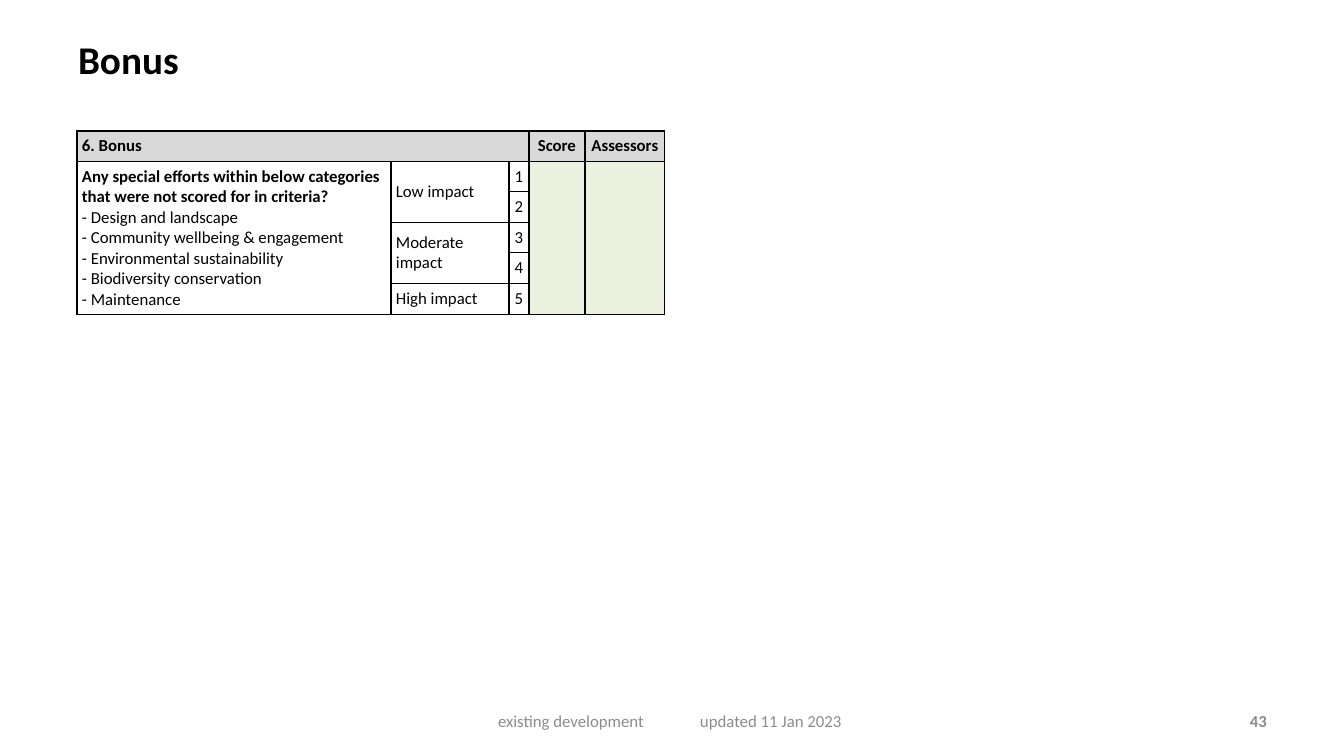
import pptx
import pptx.util
import pptx.dml.color
import pptx.enum.text
from lxml import etree
from pptx.oxml.ns import qn

COLORS = {"ink": "000000", "muted": "8C8C8C", "header": "D9D9D9", "score": "EBF1DE"}
ALIGN = pptx.enum.text.PP_ALIGN
ANCHOR = pptx.enum.text.MSO_ANCHOR
TITLE_ONLY = 5


def px(length):
    return pptx.util.Emu(round(length * 914400 / 100.8))


class SlideBuilder:
    font = "Calibri"
    body_size = 12
    cell_margin = 5

    def __init__(self, presentation):
        self.slide = presentation.slides.add_slide(presentation.slide_layouts[TITLE_ONLY])

    def add_run(self, paragraph, text, color="ink", size=body_size, bold=False):
        run = paragraph.add_run()
        run.text = text
        run.font.name = self.font
        run.font.size = pptx.util.Pt(size)
        run.font.bold = bold
        run.font.color.rgb = pptx.dml.color.RGBColor.from_string(COLORS[color])

    def title(self, text, left, top, width, height):
        title = self.slide.shapes.title
        title.left, title.top, title.width, title.height = map(px, (left, top, width, height))
        frame = title.text_frame
        frame.auto_size = pptx.enum.text.MSO_AUTO_SIZE.NONE
        frame.vertical_anchor = ANCHOR.TOP
        frame.paragraphs[0].alignment = ALIGN.LEFT
        self.add_run(frame.paragraphs[0], text, size=28, bold=True)

    def footer(self, text, left, top, width, height, align=ALIGN.LEFT, bold=False, tab=None):
        """Add a grey line of text; tab is the distance of its tab stop from the text's left."""
        box = self.slide.shapes.add_textbox(*map(px, (left, top, width, height)))
        frame = box.text_frame
        frame.word_wrap = True
        frame.vertical_anchor = ANCHOR.MIDDLE
        frame.margin_left = frame.margin_right = px(10)
        paragraph = frame.paragraphs[0]
        paragraph.alignment = align
        if tab:
            stops = etree.SubElement(paragraph._p.get_or_add_pPr(), qn("a:tabLst"))
            etree.SubElement(stops, qn("a:tab"), pos=str(px(tab)), algn="l")
        self.add_run(paragraph, text, color="muted", bold=bold)

    def table(self, left, top, widths, row_height, row_count):
        frame = self.slide.shapes.add_table(
            row_count, len(widths), px(left), px(top), px(sum(widths)), px(row_height * row_count))
        table = frame.table
        table.first_row = table.horz_banding = False
        for column, width in zip(table.columns, widths):
            column.width = px(width)
        for row in table.rows:
            row.height = px(row_height)
            for cell in row.cells:
                self.format_cell(cell)
        return table

    def format_cell(self, cell):
        cell.margin_left = cell.margin_right = px(self.cell_margin)
        cell.margin_top = cell.margin_bottom = px(self.cell_margin)
        cell.vertical_anchor = ANCHOR.MIDDLE
        properties = cell._tc.get_or_add_tcPr()
        for side in ("lnL", "lnR", "lnT", "lnB"):
            line = etree.SubElement(properties, qn(f"a:{side}"), w=str(pptx.util.Pt(1)))
            fill = etree.SubElement(line, qn("a:solidFill"))
            etree.SubElement(fill, qn("a:srgbClr"), val=COLORS["ink"])
        cell.fill.background()
        # An empty cell keeps the body size, so it does not stretch its row.
        etree.SubElement(cell.text_frame.paragraphs[0]._p, qn("a:endParaRPr"),
                         sz=str(self.body_size * 100))

    def cell(self, table, row, column, lines=(), span=(1, 1), fill=None,
             align=ALIGN.LEFT, bold_lines=0):
        """Fill a cell, merging it over span (rows, columns); the first bold_lines are bold."""
        cell = table.cell(row, column)
        if span != (1, 1):
            cell.merge(table.cell(row + span[0] - 1, column + span[1] - 1))
        if fill:
            cell.fill.solid()
            cell.fill.fore_color.rgb = pptx.dml.color.RGBColor.from_string(COLORS[fill])
        paragraph = cell.text_frame.paragraphs[0]
        paragraph.alignment = align
        for index, line in enumerate(lines):
            if index:
                paragraph.add_line_break()
            self.add_run(paragraph, line, bold=index < bold_lines)


def main():
    presentation = pptx.Presentation()
    presentation.slide_width, presentation.slide_height = px(1344), px(756)
    builder = SlideBuilder(presentation)

    builder.title("Bonus", 68, 30, 1044, 100)

    criteria = builder.table(77, 131, [314, 118, 20, 56, 80], row_height=30, row_count=6)
    builder.cell(criteria, 0, 0, ["6. Bonus"], span=(1, 3), fill="header", bold_lines=1)
    for column, heading in enumerate(["Score", "Assessors"], start=3):
        builder.cell(criteria, 0, column, [heading], fill="header",
                     align=ALIGN.CENTER, bold_lines=1)
        builder.cell(criteria, 1, column, span=(5, 1), fill="score")

    question = [
        "Any special efforts within below categories that were not scored for in criteria?",
        "- Design and landscape",
        "- Community wellbeing & engagement",
        "- Environmental sustainability",
        "- Biodiversity conservation",
        "- Maintenance",
    ]
    builder.cell(criteria, 1, 0, question, span=(5, 1), bold_lines=1)

    impacts = [("Low impact", 2), ("Moderate impact", 2), ("High impact", 1)]
    first_row = 1
    for impact, row_span in impacts:
        builder.cell(criteria, first_row, 1, [impact], span=(row_span, 1))
        first_row += row_span
    for points in range(1, 6):
        builder.cell(criteria, points, 2, [str(points)], align=ALIGN.CENTER)

    builder.footer("existing development\tupdated 11 Jan 2023", 488, 701, 398, 40, tab=202)
    builder.footer("43", 964, 701, 313, 40, align=ALIGN.RIGHT, bold=True)

    presentation.save("out.pptx")


if __name__ == "__main__":
    main()
